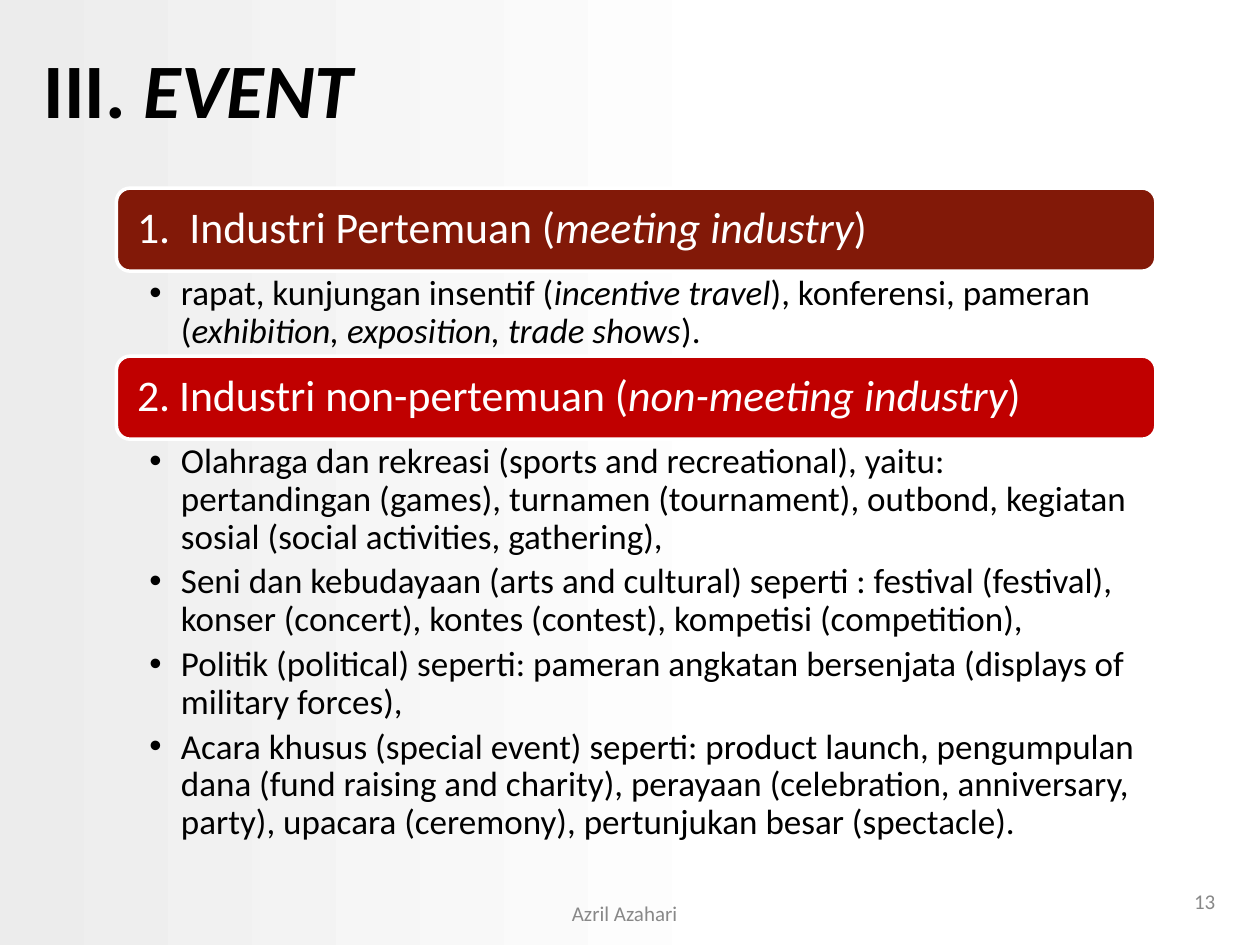
from lxml import etree
from pptx import Presentation
from pptx.dml.color import RGBColor
from pptx.enum import shapes, text
from pptx.oxml import ns
from pptx.util import Pt

BLACK = RGBColor(0, 0, 0)
WHITE = RGBColor(255, 255, 255)
PALE_GREY = RGBColor(0xEC, 0xEC, 0xEC)
GREY = RGBColor(0x88, 0x88, 0x88)
MAROON = RGBColor(0x82, 0x19, 0x08)
RED = RGBColor(0xC0, 0, 0)

TITLE = [("III. ", False), ("EVENT", True)]
AUTHOR = "Azril Azahari"
PAGE = "13"
SECTIONS = [
    {
        "heading": [("1.\tIndustri Pertemuan (", False), ("meeting industry", True), (")", False)],
        "hang": 30, "color": MAROON, "height": 48.5,
        "items": [
            [("rapat, kunjungan insentif (", False), ("incentive travel", True),
             ("), konferensi, pameran (", False),
             ("exhibition, exposition, trade shows", True), (").", False)],
        ],
    },
    {
        "heading": [("2.\tIndustri non-pertemuan (", False),
                    ("non-meeting industry", True), (")", False)],
        "hang": 24, "color": RED, "height": 240.5,
        "items": [
            [("Olahraga dan rekreasi (sports and recreational), yaitu: pertandingan (games), "
              "turnamen (tournament), outbond, kegiatan sosial (social activities, gathering),", False)],
            [("Seni dan kebudayaan (arts and cultural) seperti : festival (festival), "
              "konser (concert), kontes (contest), kompetisi (competition),", False)],
            [("Politik (political) seperti: pameran angkatan bersenjata "
              "(displays of military forces),", False)],
            [("Acara khusus (special event) seperti: product launch, pengumpulan dana "
              "(fund raising and charity), perayaan (celebration, anniversary, party), "
              "upacara (ceremony), pertunjukan besar (spectacle).", False)],
        ],
    },
]

LEFT, TOP, WIDTH, BAR_HEIGHT = 66.5, 107.5, 594, 47.5


def set_frame(frame, margins, anchor):
    frame.word_wrap = True
    frame.vertical_anchor = anchor
    frame.margin_left, frame.margin_top, frame.margin_right, frame.margin_bottom = map(Pt, margins)


def add_box(slide, box, margins=(7.2, 3.6, 7.2, 3.6), anchor=text.MSO_ANCHOR.MIDDLE):
    frame = slide.shapes.add_textbox(*map(Pt, box)).text_frame
    set_frame(frame, margins, anchor)
    return frame


def write(paragraph, runs, size, color, bold=False, align=text.PP_ALIGN.LEFT):
    paragraph.alignment = align
    for words, italic in runs:
        run = paragraph.add_run()
        run.text = words
        font = run.font
        font.name, font.size = "Calibri", Pt(size)
        font.bold, font.italic = bold, italic
        font.color.rgb = color


def hang(paragraph, indent, bullet=None):
    properties = paragraph._p.get_or_add_pPr()
    properties.set("marL", str(Pt(indent)))
    properties.set("indent", str(-Pt(indent)))
    if bullet:
        etree.SubElement(properties, ns.qn("a:buFont"), typeface="Arial")
        etree.SubElement(properties, ns.qn("a:buChar"), char=bullet)
    paragraph.line_spacing = 0.9


def add_bar(slide, section, top):
    bar = slide.shapes.add_shape(shapes.MSO_SHAPE.ROUNDED_RECTANGLE,
                                 Pt(LEFT), Pt(top), Pt(WIDTH), Pt(BAR_HEIGHT))
    bar.shadow.inherit = False
    bar.fill.solid()
    bar.fill.fore_color.rgb = section["color"]
    bar.line.color.rgb = WHITE
    bar.line.width = Pt(2)
    set_frame(bar.text_frame, (9.5, 7.2, 9.5, 7.2), text.MSO_ANCHOR.MIDDLE)
    heading = bar.text_frame.paragraphs[0]
    hang(heading, section["hang"])
    write(heading, section["heading"], 25, WHITE)


def add_items(slide, section, top):
    frame = add_box(slide, (LEFT, top, WIDTH, section["height"]),
                    (18.9, 2.3, 11.5, 2.3), text.MSO_ANCHOR.TOP)
    for index, runs in enumerate(section["items"]):
        item = frame.add_paragraph() if index else frame.paragraphs[0]
        hang(item, 18, "•")
        if index:
            item.space_before = Pt(4)
        write(item, runs, 20, BLACK)


def main():
    deck = Presentation()
    deck.slide_width, deck.slide_height = Pt(720), Pt(540)
    slide = deck.slides.add_slide(deck.slide_layouts[6])

    backdrop = slide.background.fill
    backdrop.gradient()
    backdrop.gradient_angle = 0
    for stop, position, color in zip(backdrop.gradient_stops, (0, 0.6), (PALE_GREY, WHITE)):
        stop.position = position
        stop.color.rgb = color

    title = add_box(slide, (18, 5, 552, 90))
    write(title.paragraphs[0], TITLE, 44, BLACK, bold=True)

    top = TOP
    for section in SECTIONS:
        add_bar(slide, section, top)
        add_items(slide, section, top + BAR_HEIGHT)
        top += BAR_HEIGHT + section["height"]

    for words, box, align in (
        (PAGE, (533.5, 500.5, 168, 28.75), text.PP_ALIGN.RIGHT),
        (AUTHOR, (252, 504, 210, 36), text.PP_ALIGN.CENTER),
    ):
        write(add_box(slide, box).paragraphs[0], [(words, False)], 12, GREY, align=align)

    deck.save("out.pptx")


if __name__ == "__main__":
    main()
